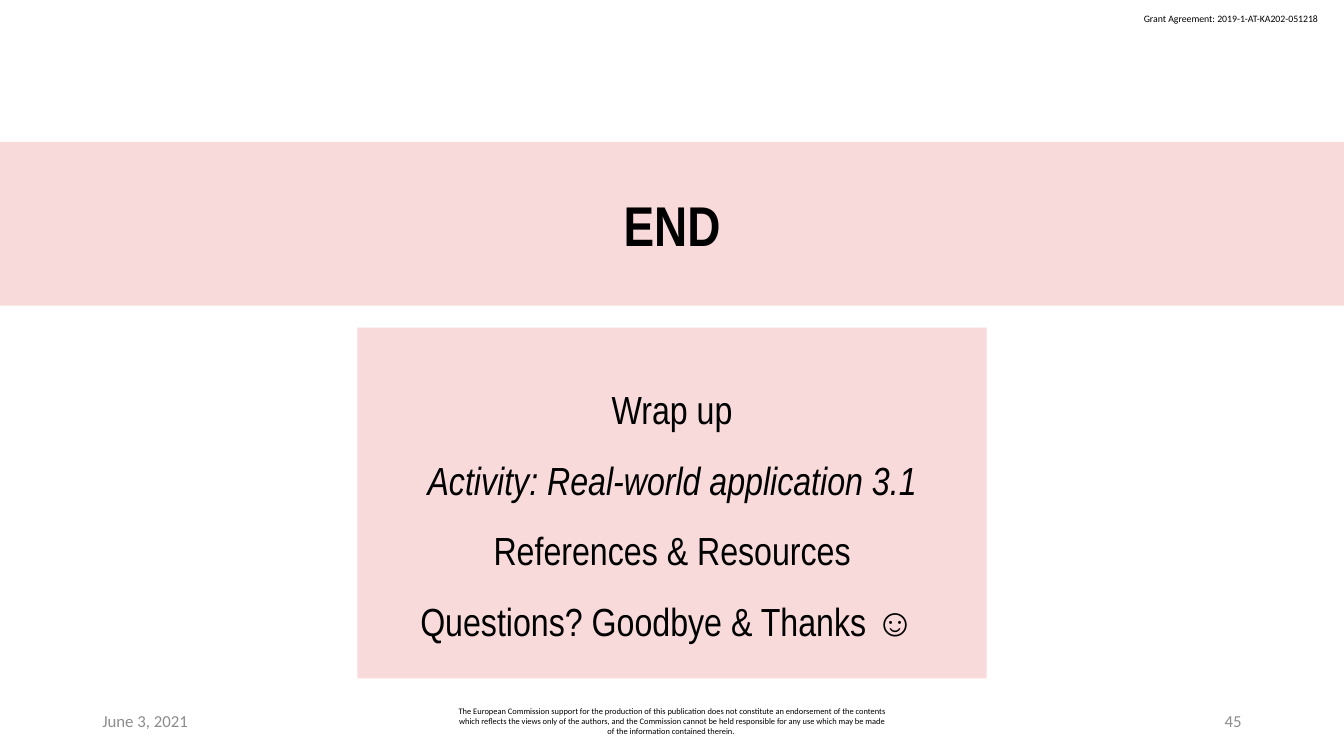
from pptx import Presentation
from pptx.dml.color import RGBColor
from pptx.enum.text import MSO_ANCHOR as Anchor, MSO_AUTO_SIZE as Fit, PP_ALIGN as Align
from pptx.util import Pt

PINK = RGBColor(0xF9, 0xDA, 0xDA)
BLACK = RGBColor(0, 0, 0)
GREY = RGBColor(0x8C, 0x8C, 0x8C)

GRANT = "Grant Agreement: 2019-1-AT-KA202-051218"
NOTICE = (
    "The European Commission support for the production of this publication "
    "does not constitute an endorsement of the contents which reflects the "
    "views only of the authors, and the Commission cannot be held responsible "
    "for any use which may be made of the information contained therein. "
)
TOPICS = [
    "Wrap up",
    "Activity: Real-world application 3.1",
    "References & Resources",
    "Questions? Goodbye & Thanks ☺ ",
]


def write(para, text, size, font="Calibri", color=BLACK, bold=False,
          italic=False, align=Align.LEFT, line=1.0):
    para.alignment = align
    para.line_spacing = line
    para.space_before = Pt(0)
    run = para.add_run()
    run.text = text
    face = run.font
    face.name, face.size = font, Pt(size)
    face.bold, face.italic = bold, italic
    face.color.rgb = color


def place(shape, left, top, width, height):
    shape.left, shape.top = Pt(left), Pt(top)
    shape.width, shape.height = Pt(width), Pt(height)


def panel(holder, box):
    """Turn a placeholder into a pink panel and return its text frame."""
    place(holder, *box)
    holder.fill.solid()
    holder.fill.fore_color.rgb = PINK
    frame = holder.text_frame
    frame.auto_size = Fit.NONE
    frame.word_wrap = True
    frame.vertical_anchor = Anchor.MIDDLE
    frame.margin_left = frame.margin_right = Pt(9.6)
    frame.margin_top = frame.margin_bottom = Pt(4.8)
    return frame


def label(slide, text, box, size, wrap=True, anchor=Anchor.MIDDLE, **style):
    frame = slide.shapes.add_textbox(*map(Pt, box)).text_frame
    frame.word_wrap = wrap
    frame.vertical_anchor = anchor
    write(frame.paragraphs[0], text, size, **style)


def main():
    deck = Presentation()
    deck.slide_width, deck.slide_height = Pt(960), Pt(540)
    slide = deck.slides.add_slide(deck.slide_layouts[0])
    title, body = slide.placeholders

    head = panel(title, (0, 101.3, 960, 117))
    write(head.paragraphs[0], "END", 40, font="Arial Narrow", bold=True,
          align=Align.CENTER)

    frame = panel(body, (255.2, 234, 449.6, 250.6))
    for i, topic in enumerate(TOPICS):
        para = frame.add_paragraph() if i else frame.paragraphs[0]
        write(para, topic, 28, font="Arial Narrow", align=Align.CENTER,
              line=1.5, italic=topic.startswith("Activity"))

    label(slide, GRANT, (810, 5.8, 141.8, 15.8), 7, wrap=False,
          anchor=Anchor.TOP)
    label(slide, "June 3, 2021", (66, 500.5, 216, 28.8), 12, color=GREY)
    label(slide, NOTICE, (318, 500.5, 324, 28.8), 6, align=Align.CENTER)
    label(slide, "45", (678, 500.5, 216, 28.8), 12, color=GREY,
          align=Align.RIGHT)

    deck.save("out.pptx")


if __name__ == "__main__":
    main()
